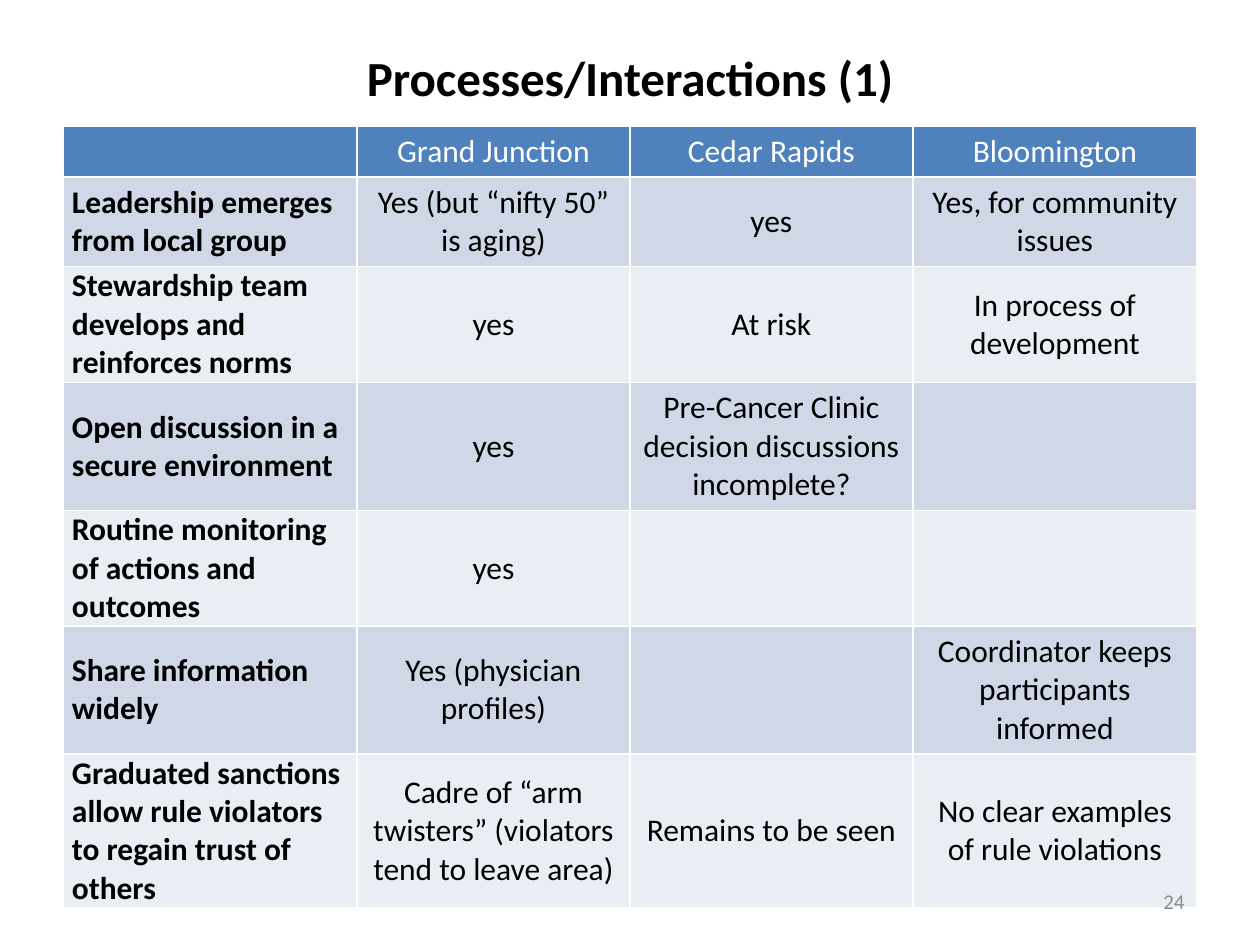
"""Builds the Processes/Interactions comparison slide."""
from dataclasses import dataclass

from pptx import Presentation
from pptx.dml.color import RGBColor as Rgb
from pptx.enum.text import MSO_ANCHOR as Anchor, PP_ALIGN as Align
from pptx.util import Pt

PX = 914400 / 126


@dataclass(frozen=True)
class Theme:
    font: str = "Calibri"
    ink: str = "000000"
    header_ink: str = "FFFFFF"
    number_ink: str = "8C8C8C"
    header_fill: str = "4F81BD"
    bands: tuple[str, str] = ("D0D8E8", "E9EDF4")
    title_size: int = 28
    table_size: int = 18
    number_size: int = 12


@dataclass(frozen=True)
class Practice:
    label: str
    grand_junction: str
    cedar_rapids: str
    bloomington: str
    height: int

    def texts(self) -> tuple[str, ...]:
        return self.label, self.grand_junction, self.cedar_rapids, self.bloomington


THEME = Theme()
COLUMNS = (294, 273, 283, 284)
HEADER = Practice("", "Grand Junction", "Cedar Rapids", "Bloomington", 51)
PRACTICES = (
    Practice("Leadership emerges from local group", "Yes (but “nifty 50” is aging)",
             "yes", "Yes, for community issues", 89),
    Practice("Stewardship team develops and reinforces norms", "yes",
             "At risk", "In process of development", 116),
    Practice("Open discussion in a secure environment", "yes",
             "Pre-Cancer Clinic decision discussions incomplete?", "", 128),
    Practice("Routine monitoring of actions and outcomes", "yes", "", "", 115),
    Practice("Share information widely", "Yes (physician profiles)",
             "", "Coordinator keeps participants informed", 128),
    Practice("Graduated sanctions allow rule violators to regain trust of others",
             "Cadre of “arm twisters” (violators tend to leave area)",
             "Remains to be seen", "No clear examples of rule violations", 153),
)


def px(length: int) -> int:
    return round(length * PX)


def write(frame, text: str, size: int, color: str, align: Align, bold: bool = False) -> None:
    paragraph = frame.paragraphs[0]
    paragraph.alignment = align
    run = paragraph.add_run()
    run.text = text
    run.font.name, run.font.size, run.font.bold = THEME.font, Pt(size), bold
    run.font.color.rgb = Rgb.from_string(color)


def add_title(slide, text: str) -> None:
    title = slide.shapes.title
    title.left, title.top, title.width, title.height = px(63), px(38), px(1134), px(78)
    title.text_frame.vertical_anchor = Anchor.MIDDLE
    write(title.text_frame, text, THEME.title_size, THEME.ink, Align.CENTER, True)


def fill_row(table, index: int, practice: Practice) -> None:
    is_header = index == 0
    table.rows[index].height = px(practice.height)
    fill = THEME.header_fill if is_header else THEME.bands[(index - 1) % 2]
    ink = THEME.header_ink if is_header else THEME.ink
    for column, text in enumerate(practice.texts()):
        cell = table.cell(index, column)
        cell.fill.solid()
        cell.fill.fore_color.rgb = Rgb.from_string(fill)
        cell.vertical_anchor = Anchor.MIDDLE
        is_label = column == 0 and not is_header
        if is_label:
            cell.margin_left = cell.margin_right = px(9)
            cell.margin_top = cell.margin_bottom = 0
        if text:
            align = Align.LEFT if is_label else Align.CENTER
            write(cell.text_frame, text, THEME.table_size, ink, align, is_label)


def add_comparison(slide) -> None:
    rows = (HEADER, *PRACTICES)
    height = sum(row.height for row in rows)
    table = slide.shapes.add_table(len(rows), len(COLUMNS), px(63), px(126),
                                   px(sum(COLUMNS)), px(height)).table
    for column, width in zip(table.columns, COLUMNS):
        column.width = px(width)
    for index, row in enumerate(rows):
        fill_row(table, index, row)


def add_page_number(slide, number: str) -> None:
    frame = slide.shapes.add_textbox(px(903), px(876), px(294), px(50)).text_frame
    frame.word_wrap = True
    frame.vertical_anchor = Anchor.MIDDLE
    write(frame, number, THEME.number_size, THEME.number_ink, Align.RIGHT)


def main() -> None:
    deck = Presentation()
    deck.slide_width, deck.slide_height = px(1260), px(945)
    slide = deck.slides.add_slide(deck.slide_layouts.get_by_name("Title Only"))
    add_title(slide, "Processes/Interactions (1)")
    add_comparison(slide)
    add_page_number(slide, "24")
    deck.save("out.pptx")


if __name__ == "__main__":
    main()
